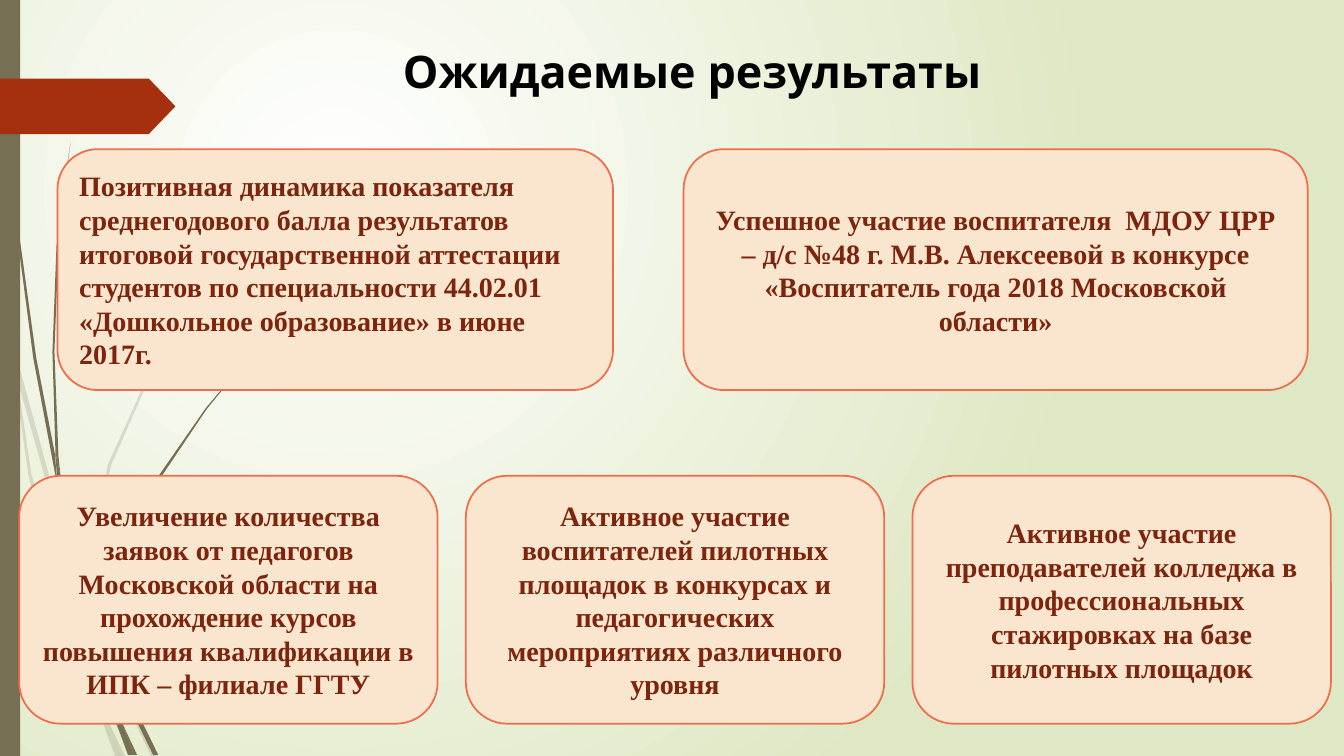
from dataclasses import dataclass

from lxml import etree
from pptx import Presentation
from pptx import util as u
from pptx.dml.color import RGBColor
from pptx.enum import shapes, text
from pptx.oxml import ns


@dataclass(frozen=True)
class Theme:
    white: str = "FFFFFF"
    mint: str = "DFE8C4"
    olive: str = "766F54"
    rust: str = "A53010"
    cream: str = "FAE5CF"
    coral: str = "EE6E4B"
    brown: str = "7C240C"
    black: str = "000000"
    head: str = "League Spartan"
    body: str = "Times New Roman"
    big: int = 32
    small: int = 20
    edge: float = 1.25
    faint: int = 20


T = Theme()
LEFT, MID = text.PP_ALIGN.LEFT, text.PP_ALIGN.CENTER

# Grass blades: corner points in inches, drawn as closed outlines
PALE = [
    [(.11, 3.5), (.09, 3.22), (0, 2.82), (0, 2.99), (.1, 3.44)],
    [(.58, 5.22), (.84, 5.99), (.85, 5.86), (.62, 5.2), (.14, 3.45),
     (.17, 3.76)],
    [(.92, 6.07), (.88, 5.96), (.88, 6.1), (1.23, 6.94), (1.5, 7.5),
     (1.55, 7.5), (1.27, 6.92)],
    [(1.19, 7.5), (1.24, 7.5), (1.05, 7.11)],
    [(.93, 6.83), (.7, 6.19), (.31, 4.69), (.17, 3.76), (.11, 3.5),
     (.28, 4.7), (.65, 6.21), (.92, 6.93), (1.01, 7.14), (.99, 7.07)],
    [(.88, 5.84), (1.1, 4.62), (1.6, 3.49), (2.29, 2.45), (2.68, 1.98),
     (2.9, 1.75), (3.12, 1.54), (3.12, 1.53), (2.89, 1.75), (2.68, 1.97),
     (2.28, 2.44), (1.58, 3.48), (1.07, 4.61), (.85, 5.84), (.85, 5.86),
     (.88, 5.96)],
    [(1.01, 7.14), (1.14, 7.5), (1.19, 7.5)],
    [(.96, 6.92), (.93, 6.83), (.99, 7.07), (1.01, 7.14), (1.19, 7.5),
     (1.05, 7.11)],
]
DARK = [
    [(.07, 1.1), (.17, 2.33), (.33, 3.55), (.56, 4.77), (.57, 4.81),
     (.55, 4.57), (.55, 4.53), (.36, 3.55), (.19, 2.32), (.08, 1.09),
     (.05, .48), (.04, 0), (.03, 0), (.04, .48)],
    [(.88, 5.92), (1.06, 6.45), (1.06, 6.31), (.93, 5.9), (.6, 4.72),
     (.64, 5.05)],
    [(1.13, 6.49), (1.1, 6.41), (1.11, 6.56), (1.32, 7.08), (1.52, 7.49),
     (1.57, 7.49), (1.36, 7.06)],
    [(1.1, 6.91), (.98, 6.57), (.72, 5.56), (.64, 5.05), (.57, 4.77),
     (.68, 5.57), (.93, 6.59), (1.11, 7.08), (1.17, 7.22), (1.16, 7.17)],
    [(.6, 4.72), (.58, 4.53), (.54, 3.49), (.58, 2.45), (.63, 1.93),
     (.7, 1.41), (.62, 1.93), (.56, 2.45), (.52, 3.49), (.55, 4.49)],
    [(1.33, 7.49), (1.36, 7.49), (1.22, 7.19)],
    [(.57, 4.77), (.64, 5.05), (.6, 4.72), (.55, 4.49), (.55, 4.53)],
    [(1.11, 6.33), (1.25, 5.52), (1.58, 4.76), (2.05, 4.06), (2.31, 3.74),
     (2.45, 3.59), (2.61, 3.44), (2.6, 3.44), (2.45, 3.58), (2.31, 3.73),
     (2.04, 4.05), (1.56, 4.74), (1.22, 5.51), (1.06, 6.31), (1.1, 6.41)],
    [(1.17, 7.22), (1.27, 7.49), (1.31, 7.49)],
    [(1.06, 6.45), (1.1, 6.91), (1.16, 7.06), (1.22, 7.19), (1.21, 7.16),
     (1.11, 6.56), (1.09, 6.51)],
    [(1.16, 7.06), (1.1, 6.91), (1.16, 7.17), (1.17, 7.22), (1.3, 7.49),
     (1.33, 7.49), (1.22, 7.19)],
]

# Result cards: left, width, alignment, wording
UPPER = [
    (.57, 5.51, LEFT, "Позитивная динамика показателя среднегодового балла "
     "результатов итоговой государственной аттестации студентов по "
     "специальности 44.02.01 «Дошкольное образование» в июне 2017г."),
    (6.78, 6.19, MID, "Успешное участие воспитателя  МДОУ ЦРР – д/с №48 "
     "г. М.В. Алексеевой в конкурсе «Воспитатель года 2018 Московской "
     "области»"),
]
LOWER = [
    "Увеличение количества заявок от педагогов Московской области на "
    "прохождение курсов повышения квалификации в ИПК – филиале ГГТУ",
    "Активное участие воспитателей пилотных площадок в конкурсах и "
    "педагогических мероприятиях различного уровня",
    "Активное участие преподавателей колледжа в профессиональных "
    "стажировках на базе пилотных площадок",
]


def rgb(code):
    return RGBColor.from_string(code)


def paint(shape, color, edge=None):
    shape.shadow.inherit = False
    shape.fill.solid()
    shape.fill.fore_color.rgb = rgb(color)
    if edge:
        shape.line.color.rgb = rgb(edge)
        shape.line.width = u.Pt(T.edge)
    else:
        shape.line.fill.background()


def write(shape, words, align, font, size, color, anchor):
    frame = shape.text_frame
    frame.word_wrap = True
    frame.vertical_anchor = anchor
    para = frame.paragraphs[0]
    para.alignment = align
    run = para.add_run()
    run.text = words
    run.font.name = font
    run.font.size = u.Pt(size)
    run.font.bold = True
    run.font.color.rgb = rgb(color)


def block(slide, kind, box, color, edge=None):
    shape = slide.shapes.add_shape(kind, *map(u.Inches, box))
    paint(shape, color, edge)
    return shape


def blade(slide, spots, alpha=None):
    first, *rest = [(u.Inches(x), u.Inches(y)) for x, y in spots]
    pen = slide.shapes.build_freeform(*first)
    pen.add_line_segments(rest, close=True)
    shape = pen.convert_to_shape()
    paint(shape, T.olive)
    if alpha:
        tone = next(shape.element.spPr.iter(ns.qn("a:srgbClr")))
        etree.SubElement(tone, ns.qn("a:alpha"), val=str(alpha * 1000))


def glow(slide):
    fill = slide.background.fill
    fill.gradient()
    for stop, color, place in zip(fill.gradient_stops, (T.white, T.mint), (0, 1)):
        stop.color.rgb = rgb(color)
        stop.position = place
    grad = next(slide.element.iter(ns.qn("a:gradFill")))
    grad.remove(grad.find(ns.qn("a:lin")))
    ring = etree.SubElement(grad, ns.qn("a:path"), path="circle")
    etree.SubElement(ring, ns.qn("a:fillToRect"),
                     l="50000", t="50000", r="100000", b="100000")


def title(slide, words):
    box = slide.shapes.add_textbox(*map(u.Inches, (.39, .38, 12.95, .76)))
    write(box, words, MID, T.head, T.big, T.black, text.MSO_ANCHOR.TOP)


def card(slide, box, words, align=MID):
    shape = block(slide, shapes.MSO_SHAPE.ROUNDED_RECTANGLE, box, T.cream, T.coral)
    write(shape, words, align, T.body, T.small, T.brown, text.MSO_ANCHOR.MIDDLE)


def main():
    deck = Presentation()
    deck.slide_width, deck.slide_height = u.Inches(13.33), u.Inches(7.5)
    slide = deck.slides.add_slide(deck.slide_layouts[6])

    # Backdrop: glow, grass, side bar and tag
    glow(slide)
    for spots in PALE:
        blade(slide, spots, T.faint)
    for spots in DARK:
        blade(slide, spots)
    block(slide, shapes.MSO_SHAPE.RECTANGLE, (0, 0, .2, 7.5), T.olive)
    tag = block(slide, shapes.MSO_SHAPE.PENTAGON, (0, .78, 1.74, .55), T.rust)
    tag.adjustments[0] = .48

    # Heading and two rows of cards
    title(slide, "Ожидаемые результаты")
    for left, width, align, words in UPPER:
        card(slide, (left, 1.48, width, 2.39), words, align)
    for col, words in enumerate(LOWER):
        card(slide, (.19 + col * 4.43, 4.72, 4.15, 2.46), words)

    deck.save("out.pptx")


if __name__ == "__main__":
    main()
